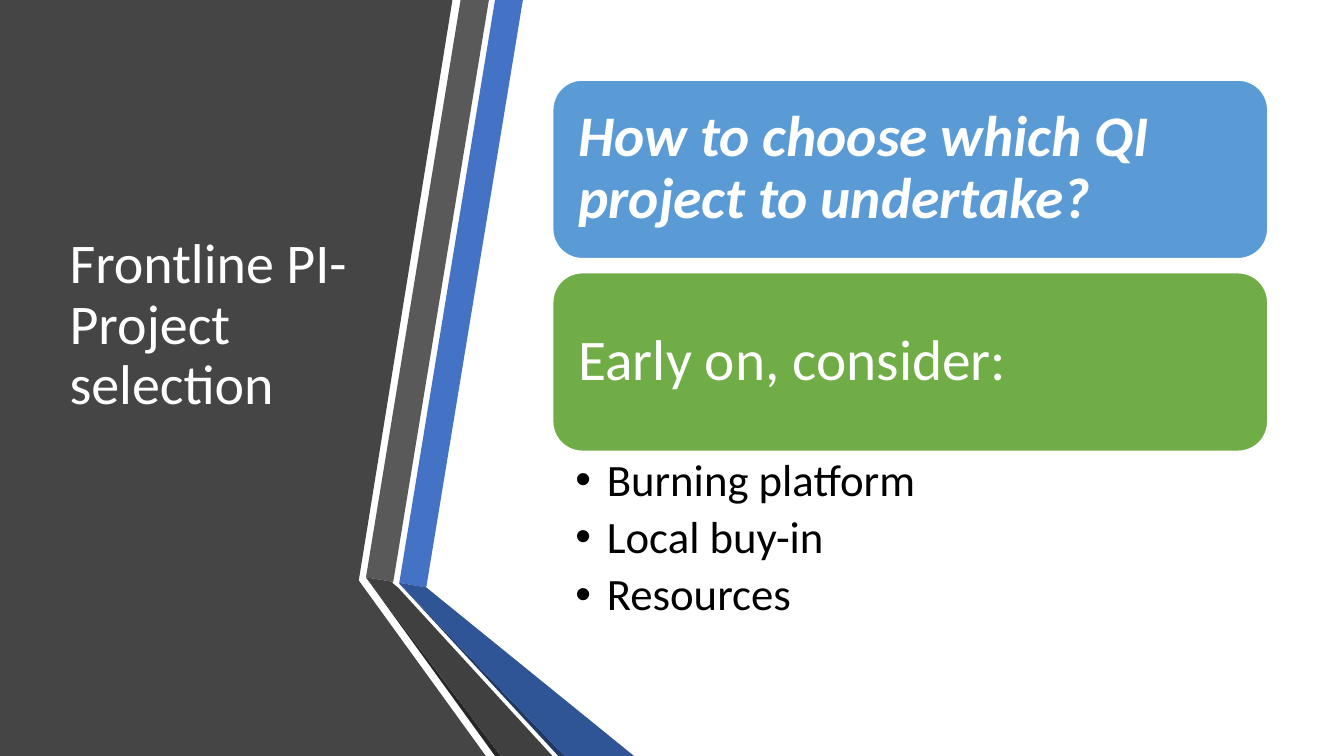
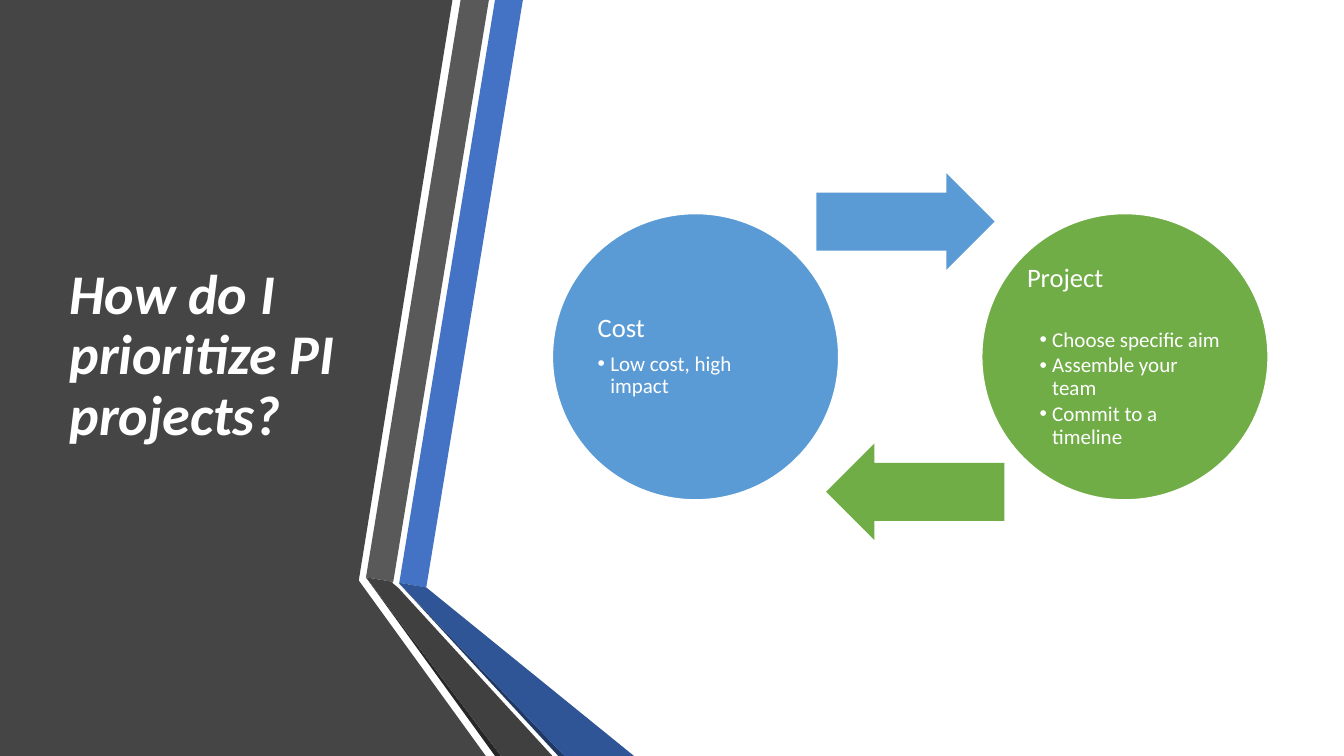
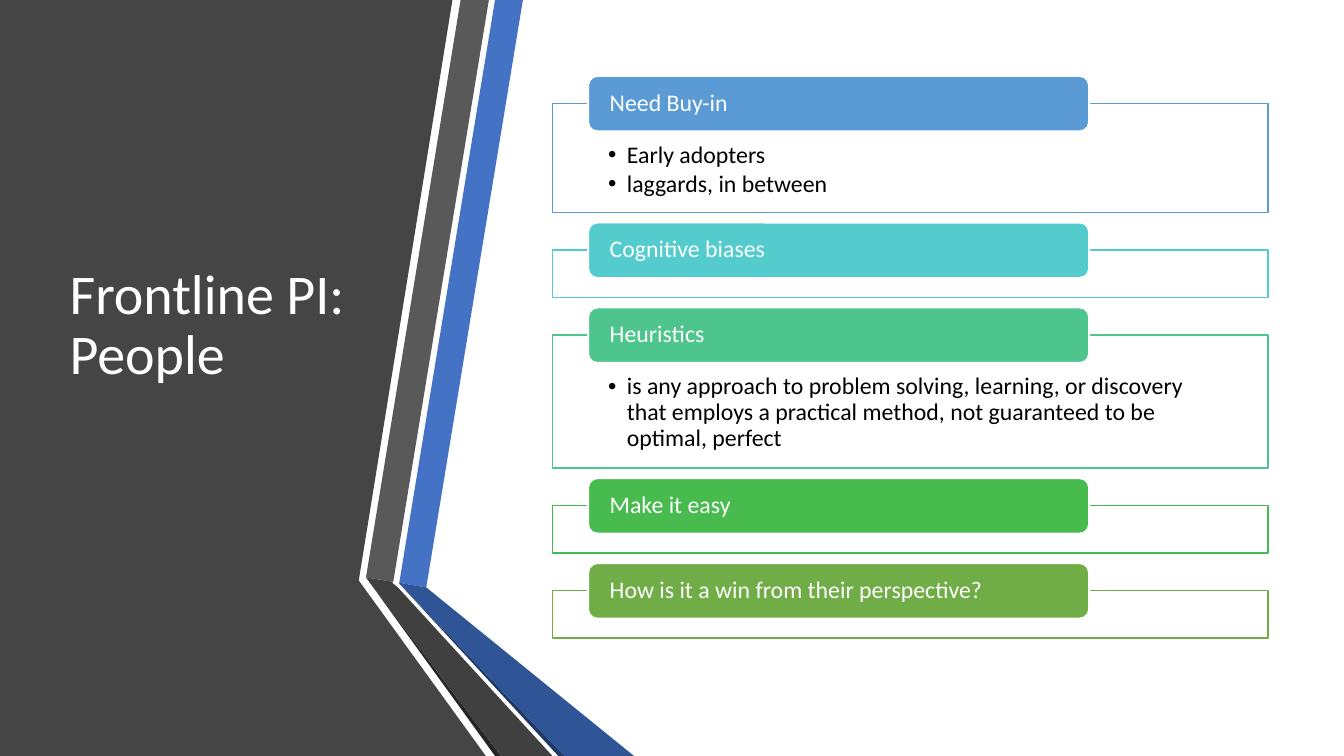
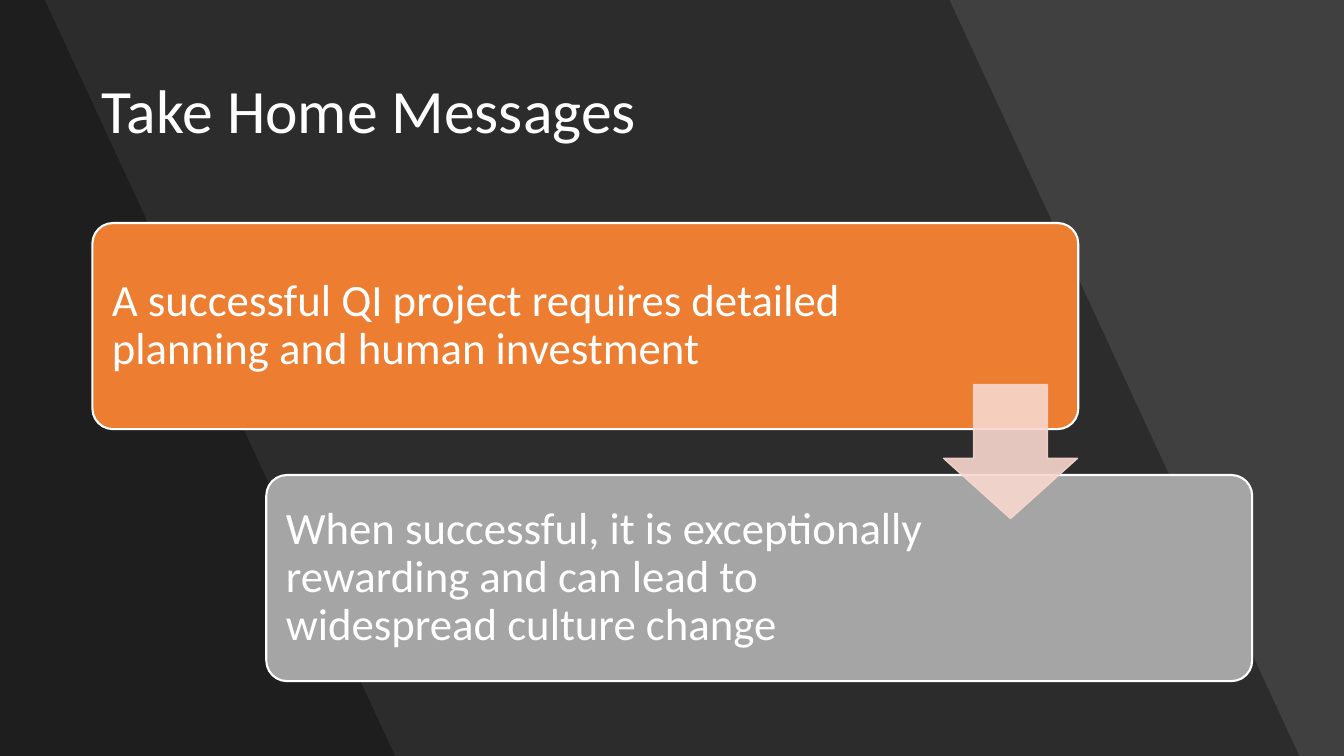
from dataclasses import dataclass

from lxml.etree import SubElement
from pptx import Presentation
from pptx.dml.color import RGBColor
from pptx.enum.shapes import MSO_SHAPE
from pptx.enum.text import MSO_ANCHOR, MSO_AUTO_SIZE, PP_ALIGN
from pptx.oxml.ns import qn
from pptx.util import Pt

FONT = "Calibri"
WIDTH, HEIGHT = 960, 540
CONTENT_LAYOUT, TITLE_LAYOUT = 1, 5

WHITE = RGBColor(0xFF, 0xFF, 0xFF)
BLACK = RGBColor(0x00, 0x00, 0x00)
PANEL = RGBColor(0x45, 0x45, 0x45)
CHARCOAL = RGBColor(0x40, 0x40, 0x40)
GRAY = RGBColor(0x59, 0x59, 0x59)
DARK = RGBColor(0x26, 0x26, 0x26)
BLUE = RGBColor(0x44, 0x72, 0xC4)
DEEP_BLUE = RGBColor(0x2F, 0x55, 0x97)
NAVY = RGBColor(0x20, 0x38, 0x64)
SKY = RGBColor(0x5B, 0x9B, 0xD5)
TURQUOISE = RGBColor(0x54, 0xCC, 0xCD)
MINT = RGBColor(0x4D, 0xC5, 0x8D)
EMERALD = RGBColor(0x48, 0xBB, 0x4F)
GREEN = RGBColor(0x70, 0xAD, 0x47)
ORANGE = RGBColor(0xED, 0x7D, 0x31)
SILVER = RGBColor(0xA5, 0xA5, 0xA5)
PEACH = RGBColor(0xF8, 0xD7, 0xCE)

# Folded ribbon beside the title panel, from back to front
RIBBON = [
    (PANEL, [(0, 0), (323.2, 0), (256.4, 414), (256.4, 414.8), (347, 540), (0, 540)]),
    (BLUE, [(285.2, 416.3), (304.5, 419.6), (373.5, 0), (353.6, 0)]),
    (GRAY, [(349.2, 0), (329, 0), (261.4, 412.4), (280.9, 415.6)]),
    (DARK, [(261.4, 412.4), (353.6, 540), (357.8, 540)]),
    (NAVY, [(285.2, 416.8), (398.8, 540), (403.2, 540)]),
    (DEEP_BLUE, [(285.2, 416.3), (285.2, 416.8), (403.2, 540), (452.9, 540), (304.5, 419.6)]),
    (CHARCOAL, [(394.6, 540), (284.4, 419.8), (280.1, 416.2), (280.9, 415.6),
                (261.4, 412.4), (357.8, 540)]),
]
SLANTS = [
    (BLACK, [(0, 0), (678.2, 0), (928.1, 540), (0, 540)]),
    (BLACK, [(0, 0), (32, 0), (282.2, 540), (0, 540)]),
]

SIDE_TITLE = (42.5, 54, 219, 401.8)
TOP_TITLE = (65.5, 28.8, 828.7, 104.4)
LEFT, CONTENT_W = 394.6, 511.2


@dataclass
class Para:
    """One paragraph; hang is the bullet's hanging indent, 0 for no bullet."""
    text: str
    size: float
    after: float = 0
    color: RGBColor = WHITE
    hang: float = 0
    left: float = 0
    emphasis: bool = False


class Deck:
    def __init__(self):
        self.prs = Presentation()
        self.prs.slide_width, self.prs.slide_height = Pt(WIDTH), Pt(HEIGHT)
        self.slide = None

    def new_slide(self, backdrop, layout=TITLE_LAYOUT, background=WHITE, opacity=100):
        self.slide = self.prs.slides.add_slide(self.prs.slide_layouts[layout])
        fill = self.slide.background.fill
        fill.solid()
        fill.fore_color.rgb = background
        for color, points in backdrop:
            self.polygon(points, color, opacity)
        for ph in self.slide.placeholders:  # placeholders go above the backdrop
            self.slide.shapes.element.append(ph.element)

    def style(self, sp, fill, line=None, weight=1, opacity=100):
        sp.shadow.inherit = False
        sp.fill.solid()
        sp.fill.fore_color.rgb = fill
        if line is None:
            sp.line.fill.background()
        else:
            sp.line.color.rgb = line
            sp.line.width = Pt(weight)
        if opacity < 100:
            for clr in sp.element.spPr.iter(qn("a:srgbClr")):
                SubElement(clr, qn("a:alpha")).set("val", str(opacity * 1000))

    def polygon(self, points, color, opacity=100):
        pts = [(Pt(x), Pt(y)) for x, y in points]
        builder = self.slide.shapes.build_freeform(*pts[0])
        builder.add_line_segments(pts[1:], close=True)
        self.style(builder.convert_to_shape(), color, opacity=opacity)

    def shape(self, kind, box, fill, line=None, weight=1, adj=(), opacity=100, rotation=0):
        sp = self.slide.shapes.add_shape(kind, *map(Pt, box))
        for i, value in enumerate(adj):
            sp.adjustments[i] = value
        sp.rotation = rotation
        self.style(sp, fill, line, weight, opacity)
        return sp

    def add_text(self, sp, paras, insets, anchor=MSO_ANCHOR.MIDDLE):
        """Fill a shape with paragraphs; insets are left, top, right, bottom."""
        tf = sp.text_frame
        tf.word_wrap = True
        tf.auto_size = MSO_AUTO_SIZE.NONE
        tf.vertical_anchor = anchor
        tf.margin_left, tf.margin_top, tf.margin_right, tf.margin_bottom = map(Pt, insets)
        for i, para in enumerate(paras):
            p = tf.add_paragraph() if i else tf.paragraphs[0]
            p.alignment = PP_ALIGN.LEFT
            p.line_spacing = 0.9
            p.space_before, p.space_after = Pt(0), Pt(para.after)
            if para.hang:
                self.bullet(p, para)
            r = p.add_run()
            r.text = para.text
            r.font.name, r.font.size = FONT, Pt(para.size)
            r.font.color.rgb = para.color
            r.font.bold = r.font.italic = para.emphasis

    def bullet(self, p, para):
        pPr = p._p.get_or_add_pPr()
        pPr.set("marL", str(Pt(para.left + para.hang)))
        pPr.set("indent", str(-Pt(para.hang)))
        SubElement(pPr, qn("a:buFont")).set("typeface", "Arial")
        SubElement(pPr, qn("a:buChar")).set("char", "•")

    def place(self, sp, box):
        sp.left, sp.top, sp.width, sp.height = map(Pt, box)

    def title(self, text, box=SIDE_TITLE, size=40, bottom=3.6, emphasis=False):
        sp = self.slide.shapes.title
        self.place(sp, box)
        self.add_text(sp, [Para(text, size, emphasis=emphasis)], (7.2, 3.6, 7.2, bottom))

    def body(self, paras, box, insets):
        sp = self.slide.placeholders[1]
        self.place(sp, box)
        self.add_text(sp, paras, insets, MSO_ANCHOR.TOP)

    def card(self, box, fill, para, insets, adj=()):
        sp = self.shape(MSO_SHAPE.ROUNDED_RECTANGLE, box, fill, WHITE, 1.5, adj)
        self.add_text(sp, [para], insets)

    def circle(self, left, top, size, fill, paras):
        sp = self.shape(MSO_SHAPE.OVAL, (left, top, size, size), fill, WHITE)
        self.add_text(sp, paras, (2.4,) * 4)

    def section(self, top, height, color, heading, items):
        """Outlined box with a coloured tab across its top edge."""
        box = self.shape(MSO_SHAPE.RECTANGLE, (LEFT, top, CONTENT_W, height), WHITE, color)
        if items:
            paras = [Para(t, 17, 2.55, BLACK, hang=13.5) for t in items]
            self.add_text(box, paras, (39.7, 28, 39.7, 9.3), MSO_ANCHOR.TOP)
        self.card((420.1, top - 19.8, 357.9, 39.7), color, Para(heading, 17, 5.95),
                  (13.5, 0, 13.5, 0))


def project_selection(deck):
    deck.new_slide(RIBBON, CONTENT_LAYOUT)
    deck.title("Frontline PI-Project selection", bottom=47.5)
    cards = [(SKY, "How to choose which QI project to undertake?", True),
             (GREEN, "Early on, consider:", False)]
    for i, (color, text, emphasis) in enumerate(cards):
        deck.card((LEFT, 57 + 137.6 * i, CONTENT_W, 128), color,
                  Para(text, 41, 14.35, emphasis=emphasis), (12.3,) * 4)
    items = ["Burning platform", "Local buy-in", "Resources"]
    deck.body([Para(t, 32, 6.4, BLACK, hang=22.5) for t in items],
              (LEFT, 322.6, CONTENT_W, 130.3), (16.3, 4.1, 22.8, 4.1))


def prioritize(deck):
    deck.new_slide(RIBBON)
    deck.title("How do I prioritize PI projects?", emphasis=True)
    size, top = 204.5, 152.6
    deck.circle(LEFT, top, size, SKY, [
        Para("Cost", 19, 6.65),
        Para("Low cost, high impact", 15, 2.25, hang=9)])
    deck.shape(MSO_SHAPE.RIGHT_ARROW, (583.1, 123.8, 127.4, 69), SKY, adj=(0.6, 0.5))
    aims = ["Choose specific aim", "Assemble your team", "Commit to a timeline"]
    deck.circle(LEFT + CONTENT_W - size, top, size, GREEN,
                [Para("Project", 19, 25.4)]
                + [Para(t, 15, 2.25, hang=9, left=9) for t in aims])
    deck.shape(MSO_SHAPE.RIGHT_ARROW, (590.1, 316.8, 127.4, 69), GREEN, adj=(0.6, 0.5),
               rotation=180)


def people(deck):
    deck.new_slide(RIBBON)
    deck.title("Frontline PI: People", bottom=47.5)
    sections = [
        (77.8, SKY, "Need Buy-in", ["Early adopters", "laggards, in between"]),
        (33.8, TURQUOISE, "Cognitive biases", []),
        (95, MINT, "Heuristics", [
            "is any approach to problem solving, learning, or discovery that employs "
            "a practical method, not guaranteed to be optimal, perfect"]),
        (33.8, EMERALD, "Make it easy", []),
        (33.8, GREEN, "How is it a win from their perspective?", []),
    ]
    top, gap = 74, 26.9
    for height, color, heading, items in sections:
        deck.section(top, height, color, heading, items)
        top += height + gap


def take_home(deck):
    deck.new_slide(SLANTS, background=CHARCOAL, opacity=30)
    deck.title("Take Home Messages", TOP_TITLE, 44)
    messages = [
        (66, 159.3, ORANGE, 153,
         "A successful QI project requires detailed planning and human investment"),
        (190.2, 339.3, SILVER, 229.5,
         "When successful, it is exceptionally rewarding and can lead to "
         "widespread culture change"),
    ]
    for left, top, color, right, text in messages:
        deck.card((left, top, 704.2, 147.2), color, Para(text, 32, 11.2),
                  (9.6, 9.6, right, 9.6), (0.1,))
    # The file order of this shape's adjustments is head length, then shaft width
    deck.shape(MSO_SHAPE.DOWN_ARROW, (674, 274.8, 95.7, 95.7), PEACH, PEACH,
               adj=(0.55, 0.45), opacity=90)


def main():
    deck = Deck()
    for build in (project_selection, prioritize, people, take_home):
        build(deck)
    deck.prs.save("out.pptx")


if __name__ == "__main__":
    main()
